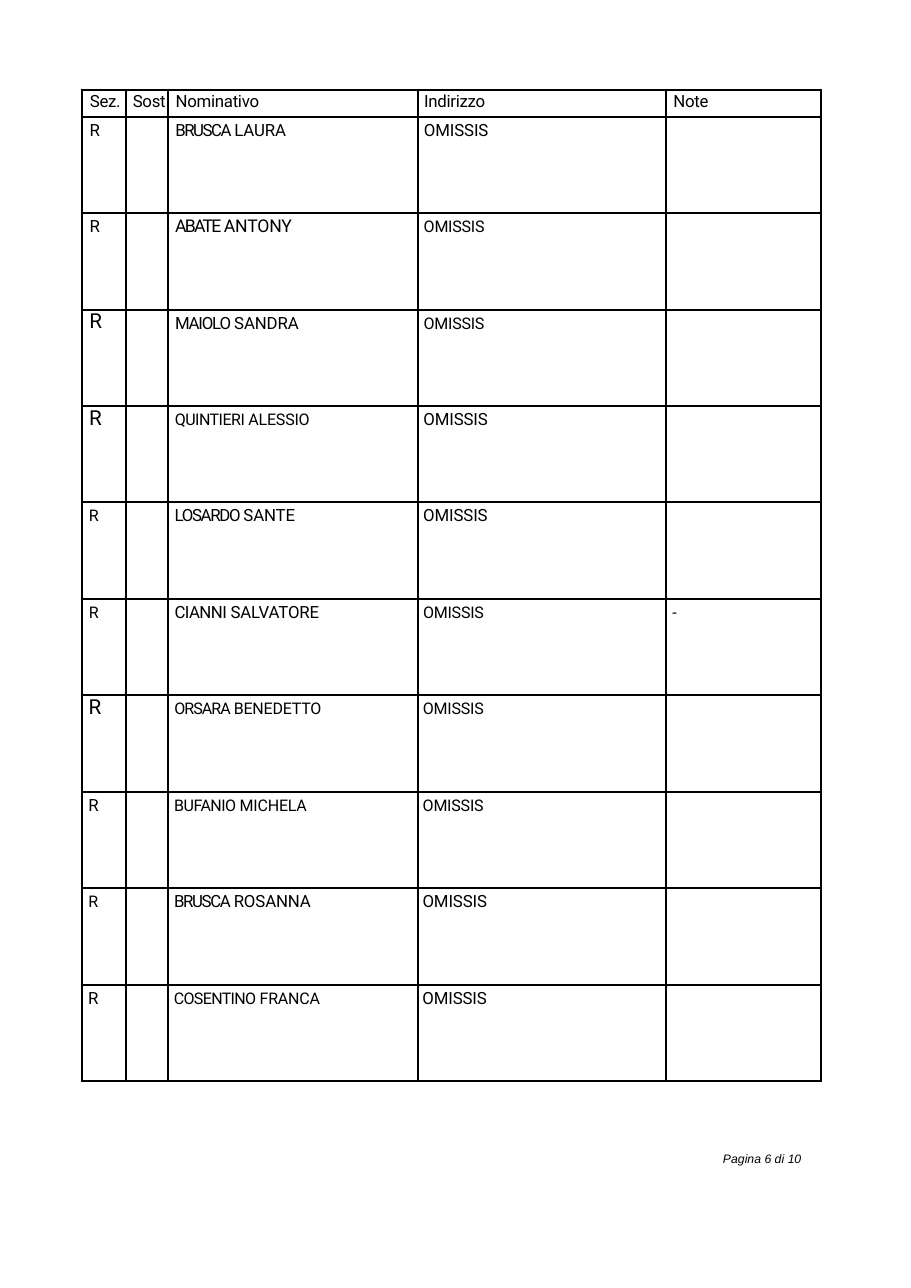
from dataclasses import dataclass

from lxml.etree import SubElement
from pptx import Presentation
from pptx.dml.color import RGBColor
from pptx.oxml import parse_xml
from pptx.oxml.ns import nsdecls, qn
from pptx.util import Pt


@dataclass(frozen=True)
class Theme:
    """Colours, fonts, type sizes and spacings of the register."""
    ink: RGBColor = RGBColor(0, 0, 0)
    register_font: str = "Roboto"
    footer_font: str = "Arial"
    large: float = 13.5
    medium: float = 11.5
    normal: float = 11
    small: float = 10.5
    footer: float = 8
    border: float = 1.5
    tight: float = -0.2
    spacing: float = -0.1


THEME = Theme()
COLUMN_WIDTHS = (28.8, 27.6, 163.4, 162.4, 101.7)
COLUMN_INDENTS = (5.3, 4.6, 5, 4.2, 4.9)
INDENT_DRIFT = 0.11
HEADER_HEIGHT, ROW_HEIGHT = 17.7, 63.1
HEADER_BASELINE, ROW_BASELINE = 11.6, 12.8
ASCENT = 0.93

HEADINGS = ("Sez.", "Sost", "Nominativo", "Indirizzo", "Note")
ADDRESS = "OMISSIS"
VOTERS = (
    (THEME.normal, "BRUSCA", -1, "LAURA", THEME.normal, THEME.normal, ""),
    (THEME.normal, "ABATE", -1.2, "ANTONY", THEME.medium, THEME.small, ""),
    (THEME.large, "MAIOLO", -0.8, "SANDRA", THEME.normal, THEME.small, ""),
    (THEME.large, "QUINTIERI", -0.3, "ALESSIO", THEME.small, THEME.normal, ""),
    (THEME.small, "LOSARDO", -0.9, "SANTE", THEME.normal, THEME.normal, ""),
    (THEME.small, "CIANNI", -0.4, "SALVATORE", THEME.normal, THEME.small, "-"),
    (THEME.large, "ORSARA", -0.6, "BENEDETTO", THEME.small, THEME.small, ""),
    (THEME.normal, "BUFANIO", -0.3, "MICHELA", THEME.small, THEME.small, ""),
    (THEME.small, "BRUSCA", -0.9, "ROSANNA", THEME.normal, THEME.normal, ""),
    (THEME.normal, "COSENTINO", -0.4, "FRANCA", THEME.small, THEME.normal, ""),
)


def add_run(paragraph, words, size, spacing, font_name, italic=False):
    """Append one run with its own size and letter spacing."""
    run = paragraph.add_run()
    run.text = words
    run.font.name = font_name
    run.font.size = Pt(size)
    run.font.italic = italic
    run.font.color.rgb = THEME.ink
    run._r.get_or_add_rPr().set("spc", str(round(spacing * 100)))


def rule_cell(cell):
    """Clear the cell fill and rule its four sides."""
    cell.fill.background()
    properties = cell._tc.get_or_add_tcPr()
    for position, side in enumerate(("lnL", "lnR", "lnT", "lnB")):
        border = parse_xml(f'<a:{side} {nsdecls("a")} w="{Pt(THEME.border)}"/>')
        fill = SubElement(border, qn("a:solidFill"))
        SubElement(fill, qn("a:srgbClr"), val=str(THEME.ink))
        properties.insert(position, border)


def write_cell(table, row, column, size, *runs):
    """Write spaced runs in a cell, on the baseline of its row."""
    cell = table.cell(row, column)
    baseline = ROW_BASELINE if row else HEADER_BASELINE
    cell.margin_left = Pt(COLUMN_INDENTS[column] - INDENT_DRIFT * row)
    cell.margin_top = Pt(max(0, baseline - ASCENT * size))
    cell.margin_right = cell.margin_bottom = Pt(0)
    for words, spacing in runs:
        add_run(cell.text_frame.paragraphs[0], words, size, spacing, THEME.register_font)


def add_grid(slide):
    """Add the empty ruled table and return it."""
    table = slide.shapes.add_table(
        len(VOTERS) + 1, len(HEADINGS), Pt(53.5), Pt(58.6),
        Pt(sum(COLUMN_WIDTHS)), Pt(HEADER_HEIGHT + ROW_HEIGHT * len(VOTERS)),
    ).table
    table.first_row = table.horz_banding = False
    for column, width in zip(table.columns, COLUMN_WIDTHS):
        column.width = Pt(width)
    for number, row in enumerate(table.rows):
        row.height = Pt(ROW_HEIGHT if number else HEADER_HEIGHT)
    for cell in table.iter_cells():
        rule_cell(cell)
    return table


def fill_register(table):
    """Write the headings and one row for each voter."""
    for column, heading in enumerate(HEADINGS):
        write_cell(table, 0, column, THEME.normal, (heading, THEME.tight))
    for row, voter in enumerate(VOTERS, 1):
        section_size, surname, squeeze, given, name_size, address_size, note = voter
        write_cell(table, row, 0, section_size, ("R", THEME.spacing))
        write_cell(table, row, 2, name_size, (f"{surname} ", squeeze), (given, THEME.spacing))
        write_cell(table, row, 3, address_size, (ADDRESS, THEME.spacing))
        if note:
            write_cell(table, row, 4, THEME.small, (note, THEME.spacing))


def add_page_number(slide):
    """Add the page number line at the foot."""
    frame = slide.shapes.add_textbox(Pt(472.3), Pt(752.7), Pt(54.7), Pt(11.5)).text_frame
    frame.word_wrap = False
    frame.margin_left = frame.margin_top = Pt(0.7)
    frame.margin_right = frame.margin_bottom = Pt(0)
    for words, spacing in (("Pagina 6 di ", 0), ("10", THEME.tight)):
        add_run(frame.paragraphs[0], words, THEME.footer, spacing, THEME.footer_font, True)


def main():
    """Build and save the register page."""
    deck = Presentation()
    deck.slide_width = Pt(596)
    deck.slide_height = Pt(842.5)
    slide = deck.slides.add_slide(deck.slide_layouts[6])
    fill_register(add_grid(slide))
    add_page_number(slide)
    deck.save("out.pptx")


if __name__ == "__main__":
    main()
